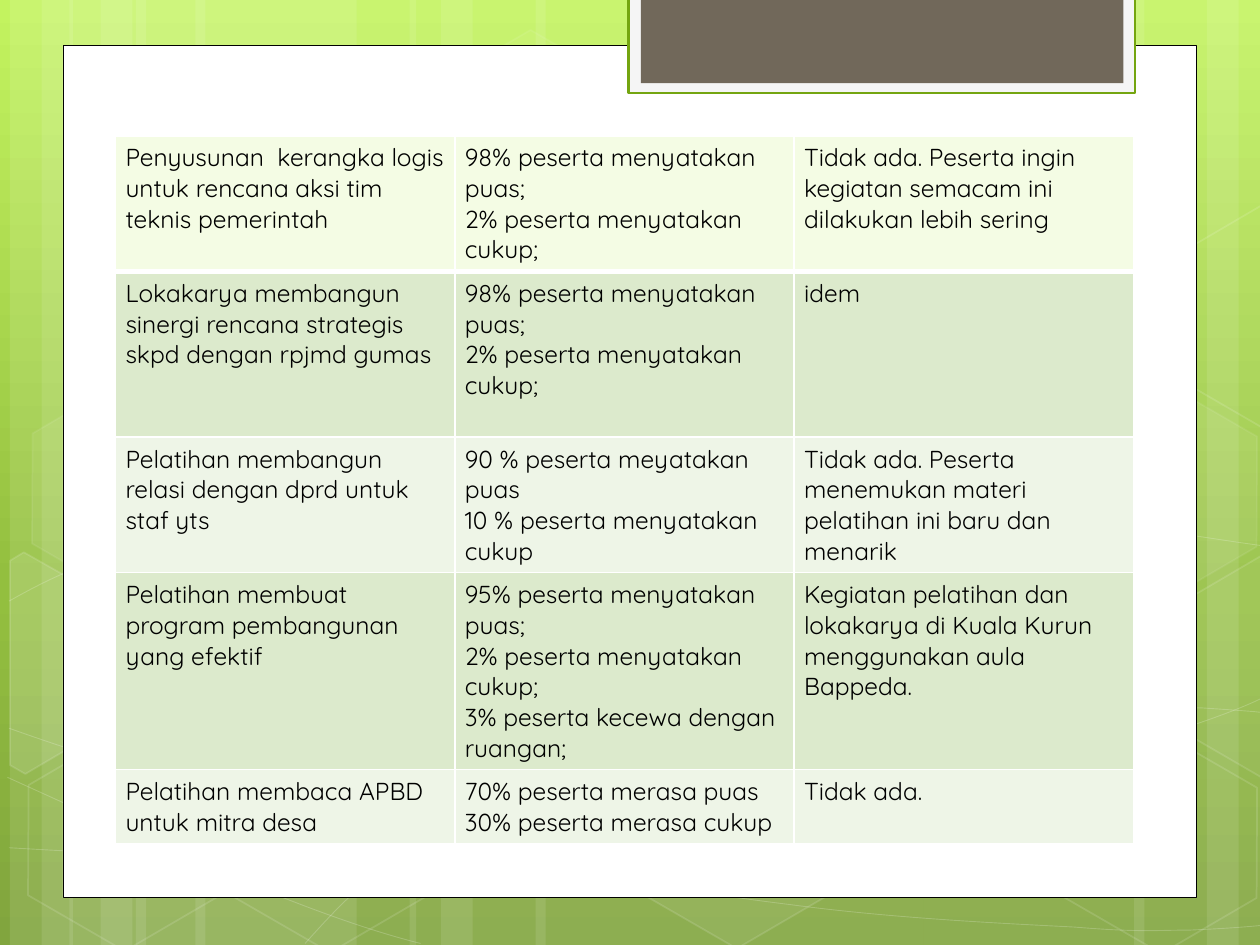
import math
from copy import deepcopy
from dataclasses import dataclass

from lxml import etree
from pptx import Presentation
from pptx import util as u
from pptx.dml import color
from pptx.enum import shapes
from pptx.oxml import ns


@dataclass(frozen=True)
class Theme:
    backdrop: tuple = ((0, "C3F35F"), (0.62, "93BF3F"), (1, "81A53E"))
    white: str = "FFFFFF"
    black: str = "000000"
    tab_frame: str = "F5F5F5"
    tab_line: str = "74A510"
    tab_fill: str = "71685A"
    rows: tuple = ("F4FCE4", "DCEACC", "EEF5E7", "DCEACC", "EEF5E7")
    font: str = "Quicksand"
    size: int = 14


def paint(shape, fill=None, line=None, width=1, fill_alpha=100, line_alpha=100):
    shape.shadow.inherit = False
    for target, value, alpha in ((shape.fill, fill, fill_alpha),
                                 (shape.line.fill, line, line_alpha)):
        if not value or not alpha:
            target.background()
            continue
        target.solid()
        target.fore_color.rgb = color.RGBColor.from_string(value)
    if line:
        shape.line.width = u.Pt(width)
    for code in shape.element.spPr.iter(ns.qn("a:srgbClr")):
        in_line = code.getparent().getparent().tag == ns.qn("a:ln")
        alpha = line_alpha if in_line else fill_alpha
        if alpha < 100:
            etree.SubElement(code, ns.qn("a:alpha"), val=str(alpha * 1000))


def outline(points, closed):
    start, *others = [(u.Cm(x), u.Cm(y)) for x, y in points]
    builder = slide.shapes.build_freeform(*start)
    builder.add_line_segments(others, close=closed)
    return builder.convert_to_shape()


theme = Theme()
presentation = Presentation()
presentation.slide_width, presentation.slide_height = u.Cm(25.4), u.Cm(19.05)
slide = presentation.slides.add_slide(presentation.slide_layouts[6])

background = slide.background.fill
background.gradient()
background.gradient_angle = 270
stop_list = next(slide.element.iter(ns.qn("a:gsLst")))
stop_list.insert(1, deepcopy(stop_list[0]))
for stop, (position, value) in zip(background.gradient_stops, theme.backdrop):
    stop.position = position
    stop.color.rgb = color.RGBColor.from_string(value)

bands = [(2.74, 4.45, 0), (0.2, 1.27, 0), (0.84, 2.11, 0), (3.94, 4.45, 0), (1.4, 1.27, 0),
         (2.03, 2.11, 0), (18.62, 4.45, 180), (24.33, 1.27, 180), (22.86, 2.11, 180),
         (10.8, 7.82, 0), (8.26, 1.27, 0), (8.89, 2.11, 0)]
for left, width, rotation in bands:
    band = slide.shapes.add_shape(shapes.MSO_SHAPE.RECTANGLE, u.Cm(left), 0,
                                  u.Cm(width), presentation.slide_height)
    band.rotation = rotation
    paint(band, theme.white, fill_alpha=10)

curves = [
    [(0.18, 17.09), (1.55, 17.17), (2.92, 17.25), (4.83, 17.22), (6.73, 17.2), (9.09, 17.15),
     (11.63, 16.89), (14.17, 16.64), (17.78, 16.15), (20.12, 15.67), (22.43, 15.19),
     (24.82, 14.43), (25.58, 14)],
    [(0.18, 12.12), (0.91, 11.71), (1.65, 11.33), (3.07, 10.95), (4.52, 10.57), (6.58, 10.01),
     (8.81, 9.83), (11.07, 9.65), (13.82, 9.63), (16.61, 9.83), (19.41, 10.03),
     (24.05, 10.82), (25.58, 11.02)],
    [(0.15, 15.67), (3.23, 17.07), (6.27, 18.47), (8.48, 19.02)],
    [(0.18, 14.68), (0.97, 14.96), (1.78, 15.24), (3.25, 15.65), (4.72, 16.03), (6.93, 16.66),
     (9.07, 17.09), (11.18, 17.53), (13.84, 17.98), (15.95, 18.24), (18.06, 18.52),
     (20.32, 18.62), (21.67, 18.69), (22.99, 18.8), (23.34, 18.75), (24, 18.75),
     (24.66, 18.72), (25.12, 18.69), (25.58, 18.64)],
    [(6.15, 19.02), (6.6, 18.52), (7.06, 18.01), (7.67, 17.55), (8.28, 17.09), (9.14, 16.59),
     (9.86, 16.23), (10.57, 15.88), (11, 15.72), (11.94, 15.47), (12.85, 15.21),
     (14.55, 14.86), (15.44, 14.68), (16.36, 14.5), (16.48, 14.5), (17.27, 14.45),
     (18.06, 14.38), (19.3, 14.3), (20.17, 14.27), (21.06, 14.25), (22.5, 14.27),
     (22.5, 14.27), (23.07, 14.27), (23.64, 14.27), (24.21, 14.27), (24.66, 14.3),
     (25.1, 14.33), (25.32, 14.35), (25.55, 14.38), (25.48, 14.35), (25.55, 14.38)],
]
for points in curves:
    curve = outline(points, False)
    segments = list(curve.element.iter(ns.qn("a:lnTo")))
    track = segments[0].getparent()
    for first in range(0, len(segments), 3):
        bezier = etree.SubElement(track, ns.qn("a:cubicBezTo"))
        for segment in segments[first:first + 3]:
            bezier.append(segment[0])
            track.remove(segment)
    paint(curve, line=theme.white, width=0.5, line_alpha=20)

hexagons = [(8.48, 0.91, 4, 8), (12.62, 14.96, 6, 12), (0.28, 15.01, 0, 12),
            (0.36, 7.92, 7, 8), (4.42, 15.04, 0, 12), (19.13, 11.51, 10, 12),
            (21.18, 15.06, 0, 12), (21.18, 7.98, 7, 8)]
tilt = 30
for left, top, fill_alpha, line_alpha in hexagons:
    hexagon = slide.shapes.add_shape(shapes.MSO_SHAPE.HEXAGON, u.Cm(left), u.Cm(top),
                                     u.Cm(4.45), u.Cm(3.86))
    hexagon.adjustments[0] = 0.285
    hexagon.rotation = tilt
    paint(hexagon, theme.white, theme.white, fill_alpha=fill_alpha, line_alpha=line_alpha)

left_edge = [(0.2, 11.3), (0.48, 11.13), (2.44, 12.24), (2.41, 14.48), (0.51, 15.6), (0.2, 15.42)]
right_edge = [(23.52, 12.32), (25.43, 11.2), (25.63, 11.33), (25.63, 15.57), (25.45, 15.67),
              (23.52, 14.55)]
upper_edge = [(x, y - 7.06) for x, y in right_edge]
cosine, sine = math.cos(math.radians(tilt)), math.sin(math.radians(tilt))
for points, (center_x, center_y), fill_alpha in ((left_edge, (0.91, 13.59), 10),
                                                 (right_edge, (25.02, 13.21), 4),
                                                 (upper_edge, (25.02, 6.15), 0)):
    upright = [(center_x + (x - center_x) * cosine + (y - center_y) * sine,
                center_y - (x - center_x) * sine + (y - center_y) * cosine) for x, y in points]
    cut_hexagon = outline(upright, True)
    cut_hexagon.rotation = tilt
    paint(cut_hexagon, theme.white, theme.white, fill_alpha=fill_alpha, line_alpha=12)

panels = [
    ((1.27, 0.91, 22.86, 17.19), theme.white, theme.black, 0.5),
    ((12.67, -0.05, 10.21, 1.93), theme.tab_frame, theme.tab_line, 1.25),
    ((12.92, -0.05, 9.73, 1.73), theme.tab_fill, None, 0),
]
for box, fill, line, width in panels:
    panel = slide.shapes.add_shape(shapes.MSO_SHAPE.RECTANGLE, *map(u.Cm, box))
    paint(panel, fill, line, width)

content = [
    (2.72, ["Penyusunan  kerangka logis untuk rencana aksi tim teknis pemerintah"],
     ["98% peserta menyatakan puas;", "2% peserta menyatakan cukup;"],
     ["Tidak ada. Peserta ingin kegiatan semacam ini dilakukan lebih sering"]),
    (3.34, ["Lokakarya membangun sinergi rencana strategis skpd dengan rpjmd gumas"],
     ["98% peserta menyatakan puas;", "2% peserta menyatakan cukup;"],
     ["idem"]),
    (2.72, ["Pelatihan membangun relasi dengan dprd untuk staf yts"],
     ["90 % peserta meyatakan puas", "10 % peserta menyatakan cukup"],
     ["Tidak ada. Peserta menemukan materi pelatihan ini baru dan menarik"]),
    (3.96, ["Pelatihan membuat program pembangunan yang efektif"],
     ["95% peserta menyatakan puas;", "2% peserta menyatakan cukup;",
      "3% peserta kecewa dengan ruangan;"],
     ["Kegiatan pelatihan dan lokakarya di Kuala Kurun menggunakan aula Bappeda."]),
    (1.48, ["Pelatihan membaca APBD untuk mitra desa"],
     ["70% peserta merasa puas 30% peserta merasa cukup"],
     ["Tidak ada."]),
]
cell_format = {"margin_left": u.Cm(0.2), "margin_right": u.Cm(0.2),
               "margin_top": u.Cm(0.13), "margin_bottom": u.Cm(0.13)}
font_format = {"name": theme.font, "size": u.Pt(theme.size), "bold": False}
table = slide.shapes.add_table(len(content), 3, u.Cm(2.33), u.Cm(2.74),
                               u.Cm(20.52), u.Cm(14.22)).table
table.horz_banding = False
for column in table.columns:
    column.width = u.Cm(6.84)
for row_index, (height, *row_texts) in enumerate(content):
    table.rows[row_index].height = u.Cm(height)
    for column_index, lines in enumerate(row_texts):
        cell = table.cell(row_index, column_index)
        for name, value in cell_format.items():
            setattr(cell, name, value)
        properties = cell._tc.get_or_add_tcPr()
        for side in "LRTB":
            heavy = (row_index, side) in ((0, "B"), (1, "T"))
            border = etree.SubElement(properties, ns.qn(f"a:ln{side}"),
                                      w=str(u.Pt(3 if heavy else 1)))
            solid = etree.SubElement(border, ns.qn("a:solidFill"))
            etree.SubElement(solid, ns.qn("a:srgbClr"), val=theme.white)
        cell.fill.solid()
        cell.fill.fore_color.rgb = color.RGBColor.from_string(theme.rows[row_index])
        cell.text_frame.text = "\n".join(lines)
        for paragraph in cell.text_frame.paragraphs:
            for run in paragraph.runs:
                for name, value in font_format.items():
                    setattr(run.font, name, value)
                run.font.color.rgb = color.RGBColor.from_string(theme.black)

presentation.save("out.pptx")
